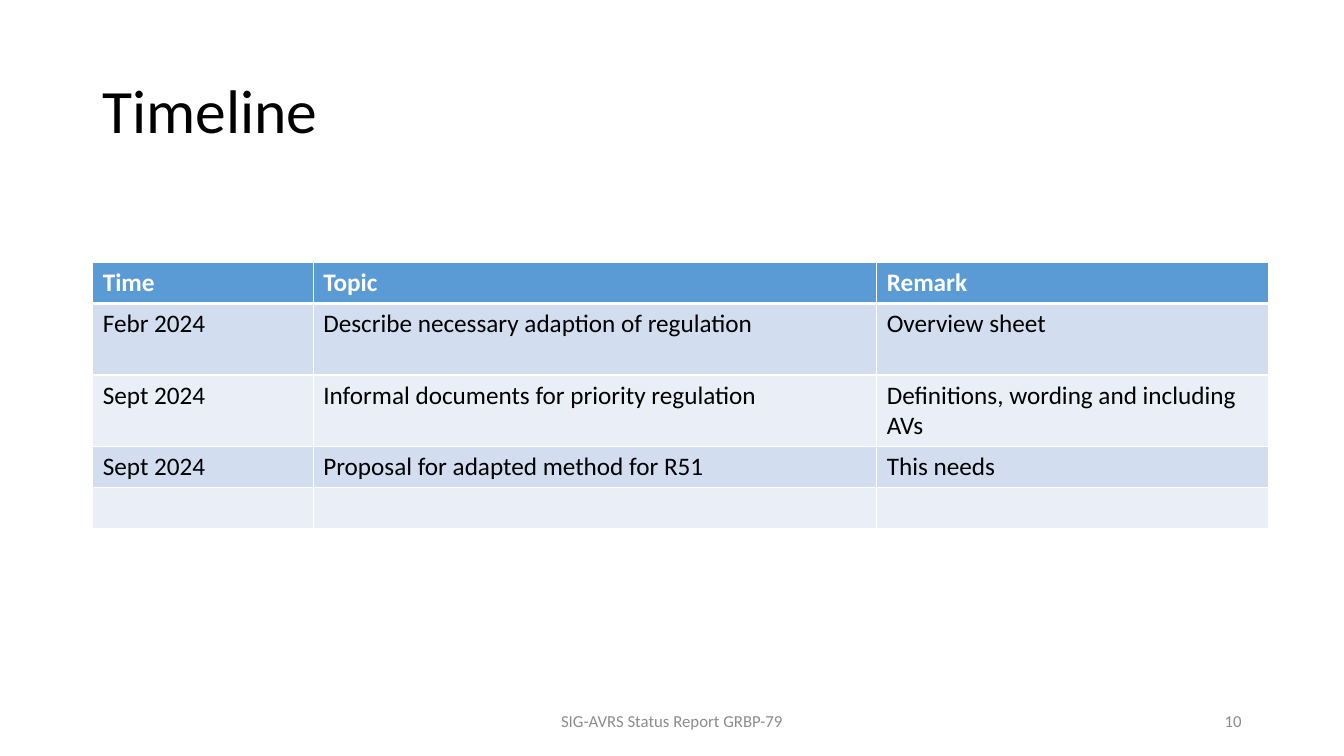
import pptx
import pptx.dml.color
import pptx.enum.text
import pptx.oxml
import pptx.oxml.ns
import pptx.util

Pt = pptx.util.Pt
ALIGN = pptx.enum.text.PP_ALIGN
MIDDLE = pptx.enum.text.MSO_ANCHOR.MIDDLE


def style_font(font, size, color, bold=False):
    font.name = "Calibri"
    font.size = Pt(size)
    font.bold = bold
    font.color.rgb = pptx.dml.color.RGBColor.from_string(color)


def set_borders(cell, bottom_width):
    properties = cell._tc.get_or_add_tcPr()
    widths = {"lnL": 1, "lnR": 1, "lnT": 1, "lnB": bottom_width}
    for position, (side, width) in enumerate(widths.items()):
        line = pptx.oxml.parse_xml(
            f'<a:{side} {pptx.oxml.ns.nsdecls("a")} w="{Pt(width)}">'
            f'<a:solidFill><a:srgbClr val="FFFFFF"/></a:solidFill></a:{side}>'
        )
        properties.insert(position, line)


presentation = pptx.Presentation()
presentation.slide_width = Pt(960)
presentation.slide_height = Pt(540)
slide = presentation.slides.add_slide(presentation.slide_layouts[5])

# Title
title = slide.shapes.title
title.left, title.top, title.width, title.height = Pt(66), Pt(28.75), Pt(828), Pt(104.4)
title.text_frame.text = "Timeline"
title.text_frame.vertical_anchor = MIDDLE
paragraph = title.text_frame.paragraphs[0]
paragraph.alignment = ALIGN.LEFT
paragraph.line_spacing = 0.9
style_font(paragraph.font, 44, "000000")

# Timeline table
rows = [
    ("Time", "Topic", "Remark"),
    ("Febr 2024", "Describe necessary adaption of regulation", "Overview sheet"),
    ("Sept 2024", "Informal documents for priority regulation", "Definitions, wording and including AVs"),
    ("Sept 2024", "Proposal for adapted method for R51", "This needs"),
    ("", "", ""),
]
column_widths = [157.5, 402.5, 280]
row_heights = [29.2, 51.2, 51.2, 29.2, 29.2]
table = slide.shapes.add_table(
    len(rows), len(column_widths), Pt(66.25), Pt(187.5),
    Pt(sum(column_widths)), Pt(sum(row_heights)),
).table
for column, width in zip(table.columns, column_widths):
    column.width = Pt(width)

for row_index, (texts, height) in enumerate(zip(rows, row_heights)):
    is_header = row_index == 0
    band = "D2DEEF" if row_index % 2 else "EAEFF7"
    table.rows[row_index].height = Pt(height)
    for cell, text in zip(table.rows[row_index].cells, texts):
        cell.text = text
        style_font(cell.text_frame.paragraphs[0].font, 18,
                   "FFFFFF" if is_header else "000000", is_header)
        cell.fill.solid()
        cell.fill.fore_color.rgb = pptx.dml.color.RGBColor.from_string(
            "5B9BD5" if is_header else band)
        set_borders(cell, 3 if is_header else 1)

# Footer and slide number
footers = [
    ("SIG-AVRS Status Report GRBP-79", 318, 324, ALIGN.CENTER),
    ("10", 678, 216, ALIGN.RIGHT),
]
for text, left, width, alignment in footers:
    text_box = slide.shapes.add_textbox(Pt(left), Pt(500.5), Pt(width), Pt(28.75))
    text_box.text_frame.word_wrap = True
    text_box.text_frame.vertical_anchor = MIDDLE
    paragraph = text_box.text_frame.paragraphs[0]
    paragraph.text = text
    paragraph.alignment = alignment
    style_font(paragraph.font, 12, "8C8C8C")

presentation.save("out.pptx")
